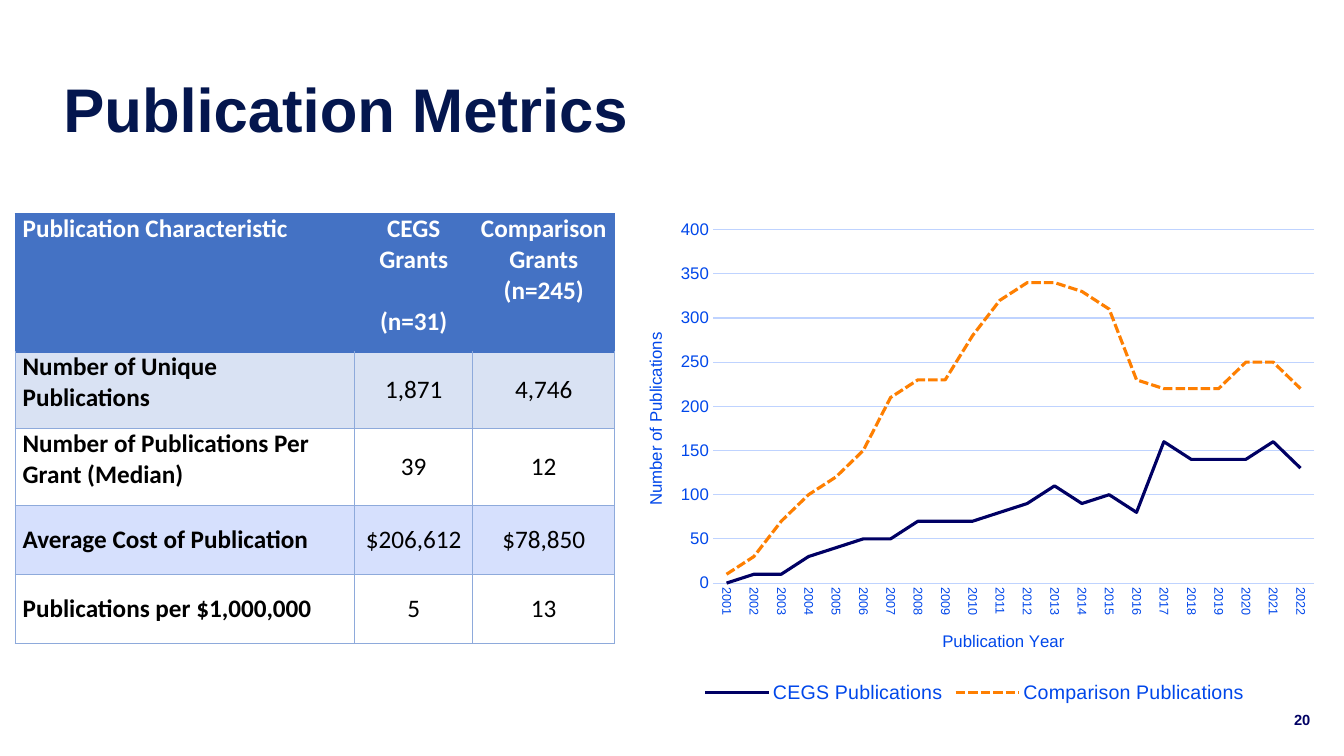
from dataclasses import dataclass

import lxml.etree
import pptx
import pptx.chart.data
import pptx.dml.color
import pptx.enum.chart
import pptx.enum.dml
import pptx.enum.text
import pptx.oxml.ns
import pptx.util

Pt = pptx.util.Pt
RGBColor = pptx.dml.color.RGBColor
qn = pptx.oxml.ns.qn
Align = pptx.enum.text.PP_ALIGN
Anchor = pptx.enum.text.MSO_ANCHOR

TITLE_NAVY = RGBColor(0x04, 0x16, 0x4E)
NAVY = RGBColor(0x00, 0x00, 0x64)
ORANGE = RGBColor(0xFE, 0x7F, 0x01)
AXIS_BLUE = RGBColor(0x00, 0x47, 0xEA)
GRID_BLUE = RGBColor(0xBF, 0xD3, 0xFF)
HEADER_BLUE = RGBColor(0x44, 0x72, 0xC4)
BORDER_BLUE = RGBColor(0x8E, 0xAA, 0xDB)
PALE_BLUE = RGBColor(0xD9, 0xE2, 0xF3)
LAVENDER = RGBColor(0xD6, 0xE0, 0xFD)
WHITE = RGBColor(0xFF, 0xFF, 0xFF)
BLACK = RGBColor(0x00, 0x00, 0x00)


@dataclass
class Label:
    text: str
    left: float
    top: float
    width: float
    height: float
    size: float
    color: RGBColor
    inset: float
    wrap: bool


@dataclass
class MetricRow:
    texts: tuple[str, str, str]
    height: float
    fill: RGBColor
    first_anchor: Anchor = Anchor.MIDDLE
    header: bool = False


@dataclass
class Trend:
    name: str
    values: list[int]
    color: RGBColor
    dashed: bool


LABELS = [
    Label("Publication Metrics", 45.36, 27.36, 869, 106.56, 44, TITLE_NAVY, 0, True),
    Label("20", 917.28, 500.4, 27.36, 28.8, 10.5, NAVY, 7.2, False),
]
COLUMN_WIDTHS = [242.64, 84.24, 101.52]
METRIC_ROWS = [
    MetricRow(("Publication Characteristic", "CEGS Grants\n(n=31)",
               "Comparison Grants (n=245)"), 98.64, HEADER_BLUE, Anchor.TOP, True),
    MetricRow(("Number of Unique Publications", "1,871", "4,746"), 54.72, PALE_BLUE, Anchor.TOP),
    MetricRow(("Number of Publications Per Grant (Median)", "39", "12"), 54.72, WHITE, Anchor.TOP),
    MetricRow(("Average Cost of Publication", "$206,612", "$78,850"), 49.5, LAVENDER),
    MetricRow(("Publications per $1,000,000", "5", "13"), 49.5, WHITE),
]
TRENDS = [
    Trend("CEGS Publications",
          [0, 10, 10, 30, 40, 50, 50, 70, 70, 70, 80, 90, 110, 90, 100, 80,
           160, 140, 140, 140, 160, 130], NAVY, False),
    Trend("Comparison Publications",
          [10, 30, 70, 100, 120, 150, 210, 230, 230, 280, 320, 340, 340, 330, 310, 230,
           220, 220, 220, 250, 250, 220], ORANGE, True),
]


def set_font(font, name: str, size: float, color: RGBColor, bold: bool = False) -> None:
    font.name, font.size, font.bold = name, Pt(size), bold
    font.color.rgb = color


def add_label(page, label: Label) -> None:
    box = page.shapes.add_textbox(Pt(label.left), Pt(label.top), Pt(label.width), Pt(label.height))
    frame = box.text_frame
    frame.word_wrap = label.wrap
    frame.vertical_anchor = Anchor.MIDDLE
    frame.margin_left = Pt(label.inset)
    frame.text = label.text
    para = frame.paragraphs[0]
    para.line_spacing = 0.9
    set_font(para.runs[0].font, "Arial", label.size, label.color, True)


def add_borders(cell, color: RGBColor, top_color: RGBColor) -> None:
    properties = cell._tc.get_or_add_tcPr()
    for index, side in enumerate(("lnL", "lnR", "lnT", "lnB")):
        line = lxml.etree.Element(qn(f"a:{side}"), w=str(Pt(1)))
        fill = lxml.etree.SubElement(line, qn("a:solidFill"))
        shade = top_color if side == "lnT" else color
        lxml.etree.SubElement(fill, qn("a:srgbClr"), val=str(shade))
        properties.insert(index, line)


def fill_cell(cell, row: MetricRow, row_index: int, column: int) -> None:
    first = column == 0
    cell.margin_left = cell.margin_right = Pt(5.4)
    cell.margin_top = cell.margin_bottom = 0
    cell.vertical_anchor = row.first_anchor if first or row.header else Anchor.MIDDLE
    add_borders(cell, HEADER_BLUE if row.header else BORDER_BLUE,
                HEADER_BLUE if row_index < 2 else BORDER_BLUE)
    cell.fill.solid()
    cell.fill.fore_color.rgb = row.fill
    cell.text_frame.text = row.texts[column]
    paras = cell.text_frame.paragraphs
    for para in paras:
        para.alignment = Align.LEFT if first else Align.CENTER
        # A one-line gap separates the parts of a split heading
        para.space_after = Pt(6 if para is paras[-1] else 22)
        set_font(para.runs[0].font, "Calibri", 18, WHITE if row.header else BLACK,
                 first or row.header)


def add_metric_table(page) -> None:
    table = page.shapes.add_table(
        len(METRIC_ROWS), len(COLUMN_WIDTHS), Pt(10.8), Pt(152.8),
        Pt(sum(COLUMN_WIDTHS)), Pt(sum(row.height for row in METRIC_ROWS))).table
    table.horz_banding = False
    for column, width in enumerate(COLUMN_WIDTHS):
        table.columns[column].width = Pt(width)
    for row_index, row in enumerate(METRIC_ROWS):
        table.rows[row_index].height = Pt(row.height)
        for column in range(len(COLUMN_WIDTHS)):
            fill_cell(table.cell(row_index, column), row, row_index, column)


def set_layout(parent, index: int, **settings: object) -> None:
    """Place a chart part by fractions of the chart area."""
    for old in parent.findall(qn("c:layout")):
        parent.remove(old)
    layout = lxml.etree.Element(qn("c:layout"))
    manual = lxml.etree.SubElement(layout, qn("c:manualLayout"))
    for name, value in settings.items():
        lxml.etree.SubElement(manual, qn(f"c:{name}"), val=str(value))
    parent.insert(index, layout)


def style_axis(axis, title: str, size: float, x: float, y: float, rotation: int) -> None:
    tick = pptx.enum.chart.XL_TICK_MARK.NONE
    axis.major_tick_mark = axis.minor_tick_mark = tick
    set_font(axis.tick_labels.font, "Arial", size, AXIS_BLUE)
    frame = axis.axis_title.text_frame
    frame.text = title
    set_font(frame.paragraphs[0].runs[0].font, "Arial", 12, AXIS_BLUE)
    body = frame._txBody.find(qn("a:bodyPr"))
    body.set("rot", str(rotation))
    body.set("vert", "horz")
    set_layout(axis.axis_title._element, 1, xMode="edge", yMode="edge", x=x, y=y)


def add_trend_chart(page) -> None:
    data = pptx.chart.data.CategoryChartData()
    data.categories = [str(year) for year in range(2001, 2023)]
    for trend in TRENDS:
        data.add_series(trend.name, trend.values)
    chart = page.shapes.add_chart(pptx.enum.chart.XL_CHART_TYPE.LINE, Pt(443.5), Pt(149.8),
                                  Pt(505.4), Pt(355.7), data).chart
    chart.has_title = False
    set_font(chart.font, "Arial", 10, AXIS_BLUE)
    chart.plots[0].vary_by_categories = False

    # Trend lines
    for series, trend in zip(chart.plots[0].series, TRENDS):
        series.smooth = False
        series.marker.style = pptx.enum.chart.XL_MARKER_STYLE.NONE
        series.format.line.width = Pt(2.25)
        series.format.line.color.rgb = trend.color
        if trend.dashed:
            series.format.line.dash_style = pptx.enum.dml.MSO_LINE.SQUARE_DOT

    # Axes
    years, counts = chart.category_axis, chart.value_axis
    style_axis(years, "Publication Year", 9, 0.45, 0.84, 0)
    style_axis(counts, "Number of Publications", 12, 0.03, 0.24, -5400000)
    years._element.find(qn("c:txPr")).find(qn("a:bodyPr")).set("rot", "5400000")
    counts.minimum_scale, counts.maximum_scale, counts.major_unit = 0, 400, 50
    counts.format.line.fill.background()
    for line in (years.format.line, counts.major_gridlines.format.line):
        line.width = Pt(0.75)
        line.color.rgb = GRID_BLUE
    set_layout(chart._chartSpace.chart.plotArea, 0, layoutTarget="inner", xMode="edge",
               yMode="edge", x=0.13, y=0.04, w=0.85, h=0.71)

    # Legend
    chart.has_legend = True
    chart.legend.position = pptx.enum.chart.XL_LEGEND_POSITION.BOTTOM
    chart.legend.include_in_layout = False
    set_font(chart.legend.font, "Arial", 14, AXIS_BLUE)


def main() -> None:
    deck = pptx.Presentation()
    deck.slide_width, deck.slide_height = Pt(960), Pt(540)
    page = deck.slides.add_slide(deck.slide_layouts[6])
    for label in LABELS:
        add_label(page, label)
    add_metric_table(page)
    add_trend_chart(page)
    deck.save("out.pptx")


if __name__ == "__main__":
    main()
